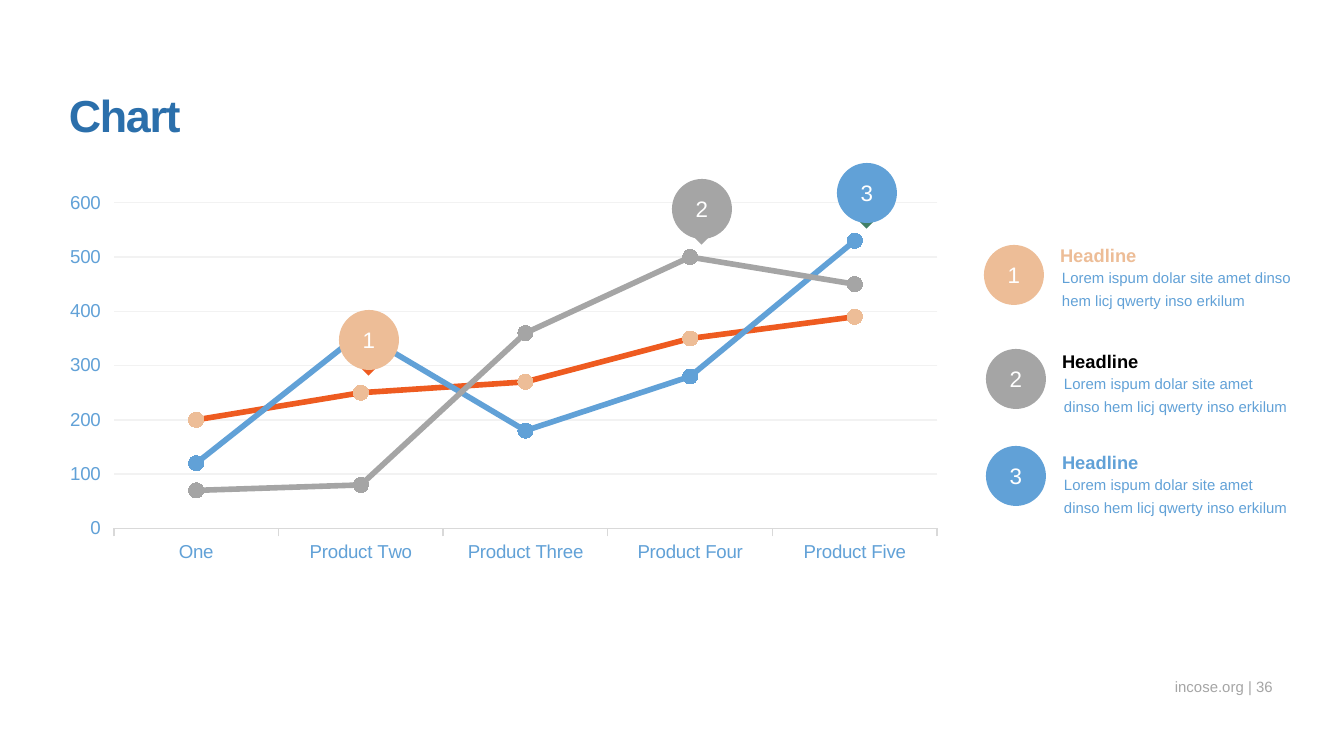
import pptx
import pptx.chart.data
import pptx.dml.color
import pptx.enum.chart
import pptx.enum.shapes
import pptx.enum.text
import pptx.oxml
import pptx.oxml.ns
import pptx.util

PX = 914400 / 134.4
HUES = {
    "title": "2B6FAB", "blue": "61A1D7", "grey": "A5A5A5", "peach": "EDBD97",
    "orange": "EE5B20", "green": "417F65", "black": "000000", "white": "FFFFFF",
    "axis": "D9D9D9", "grid": "F2F2F2",
}
RGB = {name: pptx.dml.color.RGBColor.from_string(hue) for name, hue in HUES.items()}
ALIGN = pptx.enum.text.PP_ALIGN
ANCHOR = pptx.enum.text.MSO_ANCHOR
KIND = pptx.enum.shapes.MSO_SHAPE


def write(box, text, size, hue, bold=False, align=ALIGN.LEFT, space=1.0, anchor=ANCHOR.TOP):
    frame = box.text_frame
    frame.word_wrap = True
    frame.vertical_anchor = anchor
    frame.margin_left = frame.margin_right = frame.margin_top = frame.margin_bottom = 0
    para = frame.paragraphs[0]
    para.text = text
    para.alignment = align
    para.line_spacing = space
    para.font.name = "Arial"
    para.font.size = pptx.util.Pt(size)
    para.font.bold = bold
    para.font.color.rgb = RGB[hue]


def draw(home, kind, x, y, size, hue):
    shape = home.add_shape(kind, *[round(n * PX) for n in (x, y, size, size)])
    shape.shadow.inherit = False
    shape.fill.solid()
    shape.fill.fore_color.rgb = RGB[hue]
    shape.line.fill.background()
    return shape


deck = pptx.Presentation()
deck.slide_width, deck.slide_height = round(1344 * PX), round(756 * PX)
slide = deck.slides.add_slide(deck.slide_layouts[6])
shapes = slide.shapes

# Footer and title
foot = shapes.add_textbox(*[round(n * PX) for n in (1126, 671, 147, 25)])
write(foot, "incose.org | 36", 8, "grey", align=ALIGN.RIGHT, space=1.5, anchor=ANCHOR.BOTTOM)
title = shapes.add_textbox(*[round(n * PX) for n in (69, 88, 1208, 54)])
write(title, "Chart", 24, "title", bold=True)
title.text_frame.paragraphs[0].runs[0].font._element.set("spc", "-70")

# Line chart
data = pptx.chart.data.CategoryChartData()
data.categories = ["One", "Product Two", "Product Three", "Product Four", "Product Five"]
data.add_series("Series 1", (200, 250, 270, 350, 390))
data.add_series("Series 2", (120, 360, 180, 280, 530))
data.add_series("Series 3", (70, 80, 360, 500, 450))
chart = shapes.add_chart(
    pptx.enum.chart.XL_CHART_TYPE.LINE_MARKERS,
    *[round(n * PX) for n in (70, 184, 876, 472)], data).chart
chart.has_legend = False
chart.has_title = False
chart.font.name = "Arial"
chart.font.size = pptx.util.Pt(10)
chart.font.color.rgb = RGB["blue"]
plot = chart.plots[0]
plot.vary_by_categories = False

for line, hue in zip(plot.series, ("orange", "blue", "grey")):
    line.smooth = False
    line.format.line.color.rgb = RGB[hue]
    line.format.line.width = pptx.util.Pt(3)
    line.marker.style = pptx.enum.chart.XL_MARKER_STYLE.CIRCLE
    line.marker.size = 8
    line.marker.format.fill.solid()
    line.marker.format.fill.fore_color.rgb = RGB[hue]
    line.marker.format.line.fill.background()

# Peach dots on the orange line
for spot in range(5):
    point = plot.series[0].points[spot]
    point.marker.style = pptx.enum.chart.XL_MARKER_STYLE.CIRCLE
    point.marker.size = 8
    point.marker.format.fill.solid()
    point.marker.format.fill.fore_color.rgb = RGB["peach"]
    point.marker.format.line.fill.background()
    point.format.line.color.rgb = RGB["peach"]
    point.format.line.width = pptx.util.Pt(3)

# Axes
cats, vals = chart.category_axis, chart.value_axis
cats.major_tick_mark = vals.major_tick_mark = pptx.enum.chart.XL_TICK_MARK.OUTSIDE
cats.format.line.color.rgb = RGB["axis"]
cats.format.line.width = pptx.util.Pt(0.75)
vals.minimum_scale, vals.maximum_scale, vals.major_unit = 0, 600, 100
vals.format.line.fill.background()
vals.major_gridlines.format.line.color.rgb = RGB["grid"]
vals.major_gridlines.format.line.width = pptx.util.Pt(0.75)

# Fixed plot area inside the chart
area = chart._chartSpace.chart.plotArea
for old in area.findall(pptx.oxml.ns.qn("c:layout")):
    area.remove(old)
area.insert(0, pptx.oxml.parse_xml(
    f'<c:layout {pptx.oxml.ns.nsdecls("c")}><c:manualLayout>'
    '<c:layoutTarget val="inner"/><c:xMode val="edge"/><c:yMode val="edge"/>'
    '<c:x val="0.05"/><c:y val="0.04"/><c:w val="0.94"/><c:h val="0.69"/>'
    '</c:manualLayout></c:layout>'))

# Numbered pins over the lines
pins = [(339, 310, "peach", "orange"), (672, 179, "grey", "grey"), (837, 163, "blue", "green")]
for num, (x, y, hue, tip) in enumerate(pins, 1):
    group = shapes.add_group_shape()
    draw(group.shapes, KIND.RECTANGLE, x + 18, y + 38, 23, tip).rotation = 45
    disc = draw(group.shapes, KIND.OVAL, x, y, 60, hue)
    write(disc, str(num), 12, "white", align=ALIGN.CENTER, anchor=ANCHOR.MIDDLE)

# Key: disc, headline and note
keys = [
    (984, 245, "peach", 1060, 239, "peach", 1062, 234),
    (986, 349, "grey", 1062, 345, "black", 1064, 226),
    (986, 446, "blue", 1062, 446, "blue", 1064, 228),
]
for num, (x, y, hue, left, top, ink, edge, wide) in enumerate(keys, 1):
    disc = draw(shapes, KIND.OVAL, x, y, 60, hue)
    write(disc, str(num), 12, "white", align=ALIGN.CENTER, anchor=ANCHOR.MIDDLE)
    head = shapes.add_textbox(*[round(n * PX) for n in (left, top, 210, 28)])
    write(head, "Headline", 9.8, ink, bold=True, space=1.25)
    note = shapes.add_textbox(*[round(n * PX) for n in (edge, top + 24, wide, 44)])
    write(note, "Lorem ispum dolar site amet dinso hem licj qwerty inso erkilum",
          8, "blue", space=1.3)

deck.save("out.pptx")
